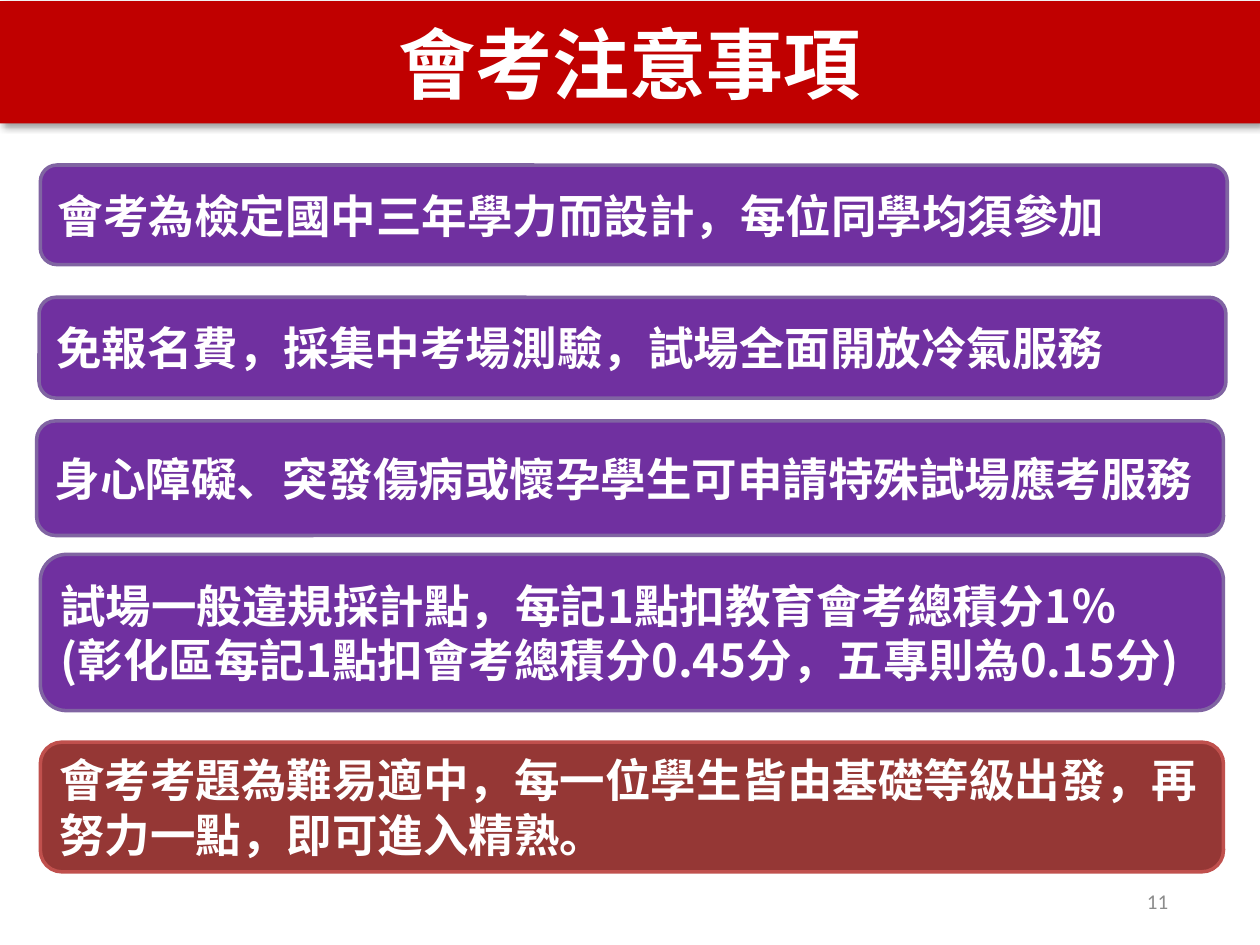
from lxml.etree import SubElement
from pptx import Presentation
from pptx.dml.color import RGBColor
from pptx.enum.shapes import MSO_SHAPE
from pptx.enum.text import MSO_ANCHOR, PP_ALIGN
from pptx.oxml import parse_xml
from pptx.oxml.ns import nsdecls, qn
from pptx.util import Inches, Pt

COLORS = {
    "banner": "C00000",
    "rule": "7030A0",
    "rule_edge": "8064A2",
    "closing": "953735",
    "closing_edge": "C0504D",
    "white": "FFFFFF",
    "page": "8C8C8C",
}
CJK = "Noto Sans CJK SC"


def rgb(name):
    return RGBColor.from_string(COLORS[name])


def write(shape, text, size=26, font=CJK, color="white", bold=True, align=PP_ALIGN.LEFT):
    frame = shape.text_frame
    frame.word_wrap = True
    frame.vertical_anchor = MSO_ANCHOR.MIDDLE
    frame.text = text
    for paragraph in frame.paragraphs:
        paragraph.alignment = align
        for run in paragraph.runs:
            run.font.size = Pt(size)
            run.font.bold = bold
            run.font.color.rgb = rgb(color)
            run.font.name = font
            SubElement(run.font._element, qn("a:ea"), typeface=font)


prs = Presentation()
prs.slide_width = Inches(10)
prs.slide_height = Inches(7.5)
slide = prs.slides.add_slide(prs.slide_layouts[6])

page_number = slide.shapes.add_textbox(Inches(7.04), Inches(6.95), Inches(2.33), Inches(0.4))
write(page_number, "11", size=12, font="Calibri", color="page", bold=False, align=PP_ALIGN.RIGHT)

banner = slide.shapes.add_shape(
    MSO_SHAPE.RECTANGLE, Inches(0), Inches(0.01), Inches(10), Inches(0.97)
)
banner.fill.solid()
banner.fill.fore_color.rgb = rgb("banner")
banner.line.fill.background()
banner._element.spPr.append(parse_xml(
    f'<a:effectLst {nsdecls("a")}>'
    f'<a:outerShdw blurRad="{Pt(4)}" dist="{Pt(3)}" dir="2700000" algn="tl" rotWithShape="0">'
    '<a:srgbClr val="000000"><a:alpha val="40000"/></a:srgbClr>'
    '</a:outerShdw></a:effectLst>'
))
write(banner, "會考注意事項", size=44, align=PP_ALIGN.CENTER)

notices = [
    (0.32, 1.31, 9.42, 0.79, "rule", "會考為檢定國中三年學力而設計，每位同學均須參加"),
    (0.31, 2.36, 9.42, 0.8, "rule", "免報名費，採集中考場測驗，試場全面開放冷氣服務"),
    (0.29, 3.34, 9.42, 0.91, "rule", "身心障礙、突發傷病或懷孕學生可申請特殊試場應考服務"),
    (0.32, 4.4, 9.39, 1.24, "rule",
     "試場一般違規採計點，每記1點扣教育會考總積分1％\n"
     "(彰化區每記1點扣會考總積分0.45分，五專則為0.15分)"),
    (0.32, 5.89, 9.39, 1.03, "closing",
     "會考考題為難易適中，每一位學生皆由基礎等級出發，再努力一點，即可進入精熟。"),
]
for left, top, width, height, role, text in notices:
    notice = slide.shapes.add_shape(
        MSO_SHAPE.ROUNDED_RECTANGLE, Inches(left), Inches(top), Inches(width), Inches(height)
    )
    notice.shadow.inherit = False
    notice.fill.solid()
    notice.fill.fore_color.rgb = rgb(role)
    notice.line.color.rgb = rgb(f"{role}_edge")
    notice.line.width = Pt(2)
    write(notice, text)

prs.save("out.pptx")
